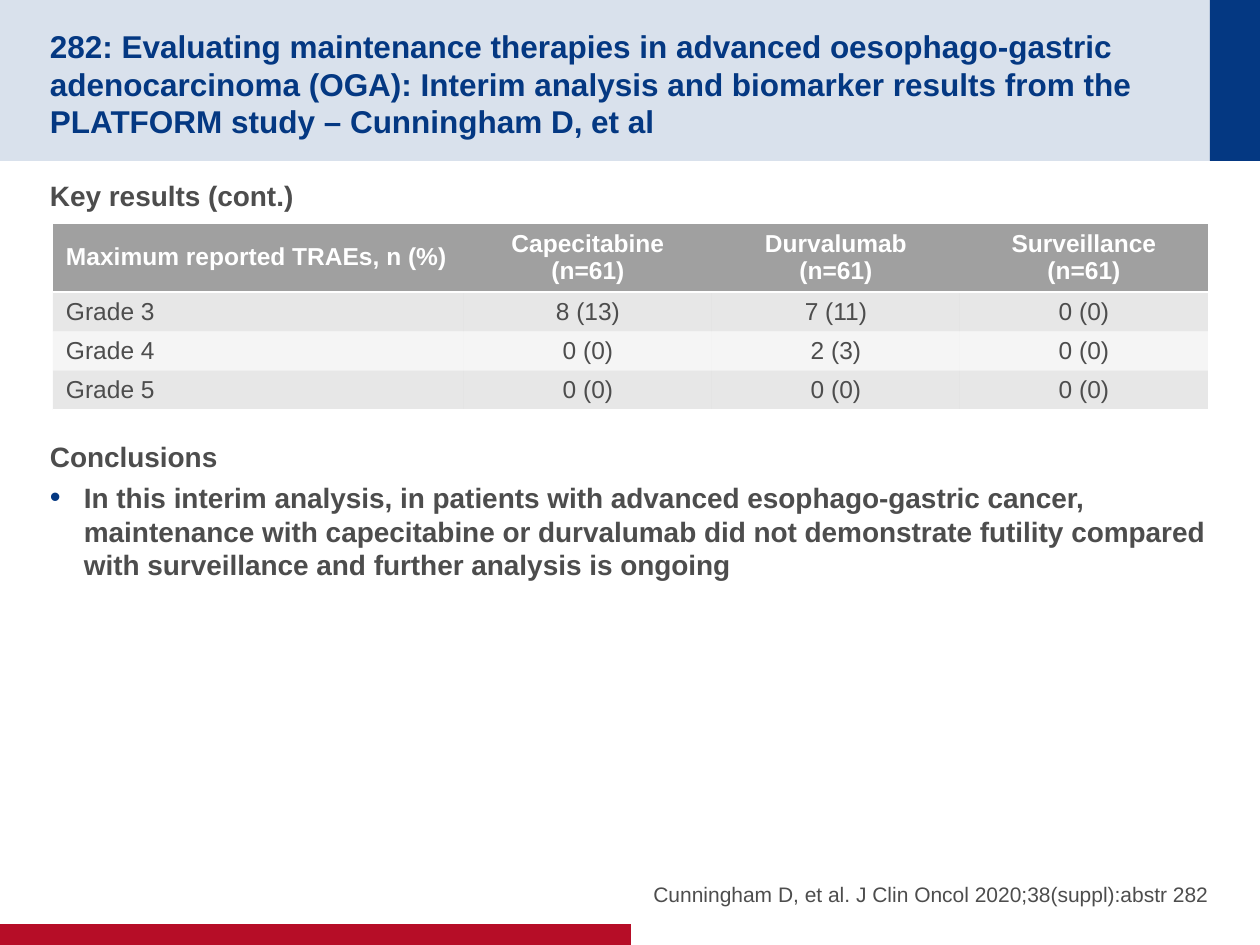
from typing import NamedTuple

from lxml.etree import SubElement
from pptx import Presentation
from pptx.dml.color import RGBColor
from pptx.enum.shapes import MSO_SHAPE as Shape
from pptx.enum.text import MSO_ANCHOR as Anchor, PP_ALIGN as Align
from pptx.oxml import parse_xml
from pptx.oxml.ns import nsdecls, qn
from pptx.util import Emu, Pt

SCALE = 914400 / 126
FONT = "Arial"
COLORS = {"navy": "043882", "red": "B60D27", "text": "4D4D4D", "gray": "A0A0A0", "white": "FFFFFF"}
NO_STYLE = "{2D5ABB26-0587-4C30-8999-92F81FD0307C}"


class Area(NamedTuple):
    left: int
    top: int
    width: int
    height: int


class Band(NamedTuple):
    area: Area
    color: str
    opacity: int = 100


class Line(NamedTuple):
    text: str
    before: int = 0
    after: int = 4
    bullet: bool = False


class TextBlock(NamedTuple):
    area: Area
    lines: list[Line]
    size: int
    color: str = "text"
    bold: bool = True
    align: Align = Align.LEFT
    anchor: Anchor = Anchor.TOP
    inset_top: int = 6
    inset_bottom: int = 0


BANDS = [
    Band(Area(0, 0, 1260, 161), "navy", 15),
    Band(Area(1210, 0, 50, 161), "navy"),
    Band(Area(0, 924, 631, 21), "red"),
]
BLOCKS = [
    TextBlock(Area(50, 25, 1135, 111), [
        Line("282: Evaluating maintenance therapies in advanced oesophago-gastric adenocarcinoma (OGA): "
             "Interim analysis and biomarker results from the PLATFORM study – Cunningham D, et al", after=0),
    ], 18, color="navy", anchor=Anchor.MIDDLE),
    TextBlock(Area(50, 173, 1160, 654), [
        Line("Key results (cont.)"),
        Line("Conclusions", before=126),
        Line("In this interim analysis, in patients with advanced esophago-gastric cancer, maintenance with "
             "capecitabine or durvalumab did not demonstrate futility compared with surveillance and further "
             "analysis is ongoing", bullet=True),
    ], 16, inset_bottom=6),
    TextBlock(Area(640, 840, 569, 67), [
        Line("Cunningham D, et al. J Clin Oncol 2020;38(suppl):abstr 282"),
    ], 12, bold=False, align=Align.RIGHT, anchor=Anchor.BOTTOM, inset_top=0),
]
TABLE_AREA = Area(53, 223, 1155, 176)
COLUMNS = [411, 248, 248, 248]
ROW_HEIGHTS = [65, 37, 37, 37]
ROWS = [
    ["Maximum reported TRAEs, n (%)"] + [f"{arm}\v(n=61)" for arm in ("Capecitabine", "Durvalumab", "Surveillance")],
    ["Grade 3", "8 (13)", "7 (11)", "0 (0)"],
    ["Grade 4", "0 (0)", "2 (3)", "0 (0)"],
    ["Grade 5", "0 (0)", "0 (0)", "0 (0)"],
]
ROW_OPACITY = [100, 25, 10, 25]


def px(length: int) -> Emu:
    """Turn whole pixels into EMU."""
    return Emu(round(length * SCALE))


def paint(fill, properties, color: str, opacity: int) -> None:
    """Fill solidly, with transparency when opacity is below 100."""
    fill.solid()
    fill.fore_color.rgb = RGBColor.from_string(COLORS[color])
    if opacity < 100:
        tint = properties.find(qn("a:solidFill")).find(qn("a:srgbClr"))
        SubElement(tint, qn("a:alpha"), val=str(opacity * 1000))


def style_runs(para, size: int, color: str, bold: bool) -> None:
    """Format every run of a paragraph."""
    for span in para.runs:
        span.font.name, span.font.size, span.font.bold = FONT, Pt(size), bold
        span.font.color.rgb = RGBColor.from_string(COLORS[color])


def add_bullet(para) -> None:
    """Give a paragraph a hanging navy bullet."""
    properties = para._p.get_or_add_pPr()
    properties.set("marL", str(px(34)))
    properties.set("indent", str(-px(34)))
    SubElement(SubElement(properties, qn("a:buClr")), qn("a:srgbClr"), val=COLORS["navy"])
    SubElement(properties, qn("a:buSzPct"), val="110000")
    SubElement(properties, qn("a:buFont"), typeface=FONT)
    SubElement(properties, qn("a:buChar"), char="•")


def add_band(page, band: Band) -> None:
    """Draw one borderless rectangle."""
    shape = page.shapes.add_shape(Shape.RECTANGLE, *map(px, band.area))
    shape.shadow.inherit = False
    shape.line.fill.background()
    paint(shape.fill, shape._element.spPr, band.color, band.opacity)


def add_text(page, block: TextBlock) -> None:
    """Draw one text box with its paragraphs."""
    frame = page.shapes.add_textbox(*map(px, block.area)).text_frame
    frame.word_wrap = True
    frame.vertical_anchor = block.anchor
    frame.margin_left = frame.margin_right = 0
    frame.margin_top, frame.margin_bottom = px(block.inset_top), px(block.inset_bottom)
    frame.text = "\n".join(line.text for line in block.lines)
    for para, line in zip(frame.paragraphs, block.lines):
        para.alignment = block.align
        para.space_before, para.space_after = Pt(line.before), Pt(line.after)
        style_runs(para, block.size, block.color, block.bold)
        if line.bullet:
            add_bullet(para)


def add_border(properties, side: str, position: int) -> None:
    """Put a white one-point border on a cell side."""
    properties.insert(position, parse_xml(
        f'<a:{side} {nsdecls("a")} w="12700"><a:solidFill><a:srgbClr val="{COLORS["white"]}"/>'
        f'</a:solidFill></a:{side}>'))


def fill_cell(cell, text: str, row: int, column: int) -> None:
    """Write and format one table cell."""
    header = row == 0
    cell.text_frame.text = text
    cell.vertical_anchor = Anchor.MIDDLE
    cell.margin_left = cell.margin_right = px(13)
    cell.margin_top = cell.margin_bottom = px(5)
    para = cell.text_frame.paragraphs[0]
    para.alignment = Align.CENTER if column else Align.LEFT
    style_runs(para, 14, "white" if header else "text", header)
    properties = cell._tc.get_or_add_tcPr()
    paint(cell.fill, properties, "gray", ROW_OPACITY[row])
    sides = ["lnT"] * header + ["lnB"] * (row in (0, len(ROWS) - 1))
    for position, side in enumerate(sides):
        add_border(properties, side, position)


def add_results(page) -> None:
    """Draw the table of adverse events."""
    table = page.shapes.add_table(len(ROWS), len(COLUMNS), *map(px, TABLE_AREA)).table
    table._tbl.tblPr.find(qn("a:tableStyleId")).text = NO_STYLE
    for column, width in zip(table.columns, COLUMNS):
        column.width = px(width)
    for row, (height, texts) in enumerate(zip(ROW_HEIGHTS, ROWS)):
        table.rows[row].height = px(height)
        for column, text in enumerate(texts):
            fill_cell(table.cell(row, column), text, row, column)


def main() -> None:
    """Build and save the slide."""
    deck = Presentation()
    deck.slide_width, deck.slide_height = px(1260), px(945)
    page = deck.slides.add_slide(deck.slide_layouts[6])
    for band in BANDS:
        add_band(page, band)
    for block in BLOCKS:
        add_text(page, block)
    add_results(page)
    deck.save("out.pptx")


if __name__ == "__main__":
    main()
